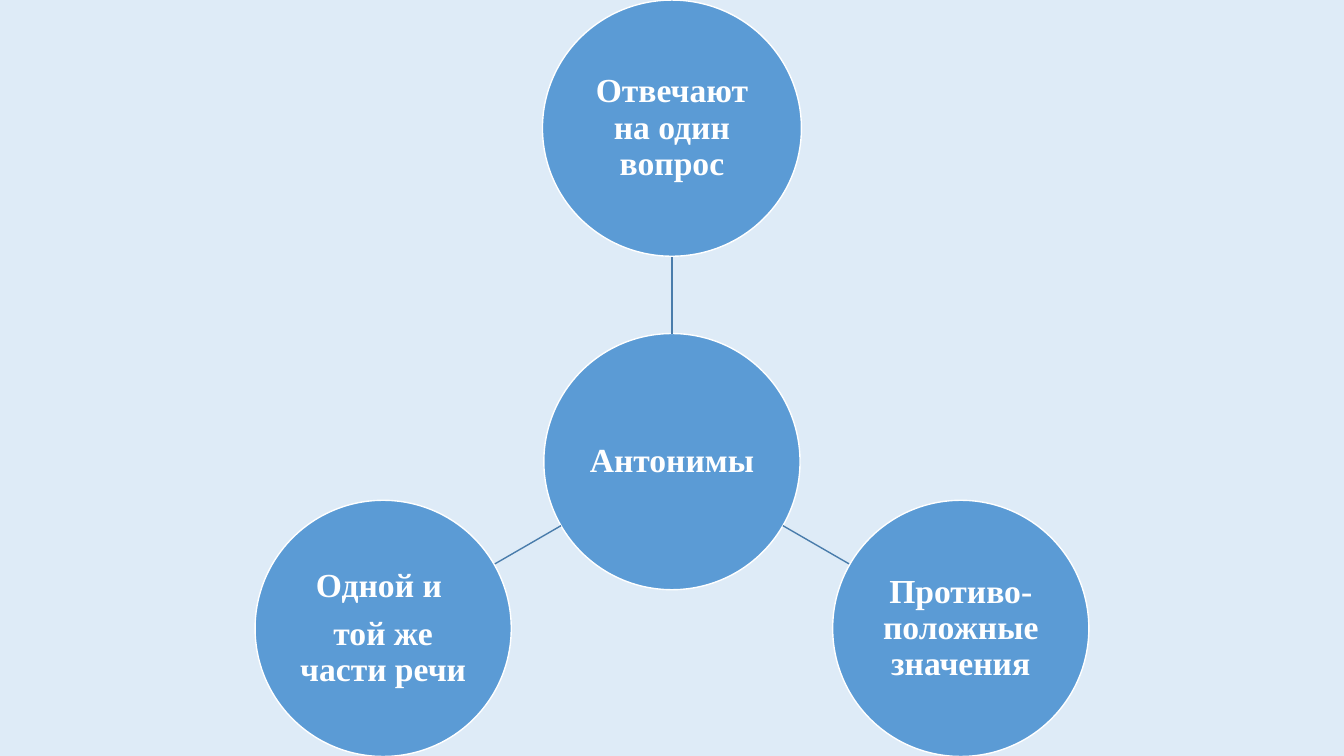
import math

import pptx
import pptx.dml.color
import pptx.enum.shapes
import pptx.enum.text
import pptx.oxml.ns
import pptx.util
from lxml import etree

Pt = pptx.util.Pt
COLORS = {"background": "DEEBF7", "circle": "5B9BD5", "spoke": "497CAB", "white": "FFFFFF"}
CENTER_X, CENTER_Y = 480, 329.75
DIAMETER = 183
ORBIT = 238.2
SATELLITES = [
    (-90, 185, ["Отвечают на один вопрос"]),
    (30, DIAMETER, ["Противо-положные значения"]),
    (150, DIAMETER, ["Одной и ", "той же части речи"]),
]


def color(name):
    return pptx.dml.color.RGBColor.from_string(COLORS[name])


def add_circle(x, y, width, texts):
    """Add a labelled circle centred on x, y."""
    circle = slide.shapes.add_shape(
        pptx.enum.shapes.MSO_SHAPE.OVAL,
        Pt(x - width / 2), Pt(y - DIAMETER / 2), Pt(width), Pt(DIAMETER))
    circle.shadow.inherit = False
    circle.fill.solid()
    circle.fill.fore_color.rgb = color("circle")
    circle.line.color.rgb = color("white")
    circle.line.width = Pt(1)
    frame = circle.text_frame
    frame.word_wrap = True
    frame.vertical_anchor = pptx.enum.text.MSO_ANCHOR.MIDDLE
    frame.margin_left = frame.margin_right = Pt(1.5)
    frame.margin_top = frame.margin_bottom = Pt(1.5)
    for index, text in enumerate(texts):
        paragraph = frame.add_paragraph() if index else frame.paragraphs[0]
        paragraph.text = text
        paragraph.alignment = pptx.enum.text.PP_ALIGN.CENTER
        paragraph.line_spacing = 0.9
        paragraph.space_after = Pt(8.4)
        paragraph.font.name = "Times New Roman"
        paragraph.font.size = Pt(24)
        paragraph.font.bold = True
        paragraph.font.color.rgb = color("white")


presentation = pptx.Presentation()
presentation.slide_width = Pt(960)
presentation.slide_height = Pt(540)
slide = presentation.slides.add_slide(presentation.slide_layouts[6])
slide.background.fill.solid()
slide.background.fill.fore_color.rgb = color("background")

add_circle(CENTER_X, CENTER_Y, DIAMETER, ["Антонимы"])

for degrees, width, texts in SATELLITES:
    dx, dy = math.cos(math.radians(degrees)), math.sin(math.radians(degrees))
    start, end = DIAMETER / 2, ORBIT - DIAMETER / 2
    spoke = slide.shapes.add_connector(
        pptx.enum.shapes.MSO_CONNECTOR.STRAIGHT,
        Pt(CENTER_X + start * dx), Pt(CENTER_Y + start * dy),
        Pt(CENTER_X + end * dx), Pt(CENTER_Y + end * dy))
    spoke.line.color.rgb = color("spoke")
    spoke.line.width = Pt(1)
    etree.SubElement(spoke._element.spPr, pptx.oxml.ns.qn("a:effectLst"))
    add_circle(CENTER_X + ORBIT * dx, CENTER_Y + ORBIT * dy, width, texts)

presentation.save("out.pptx")
